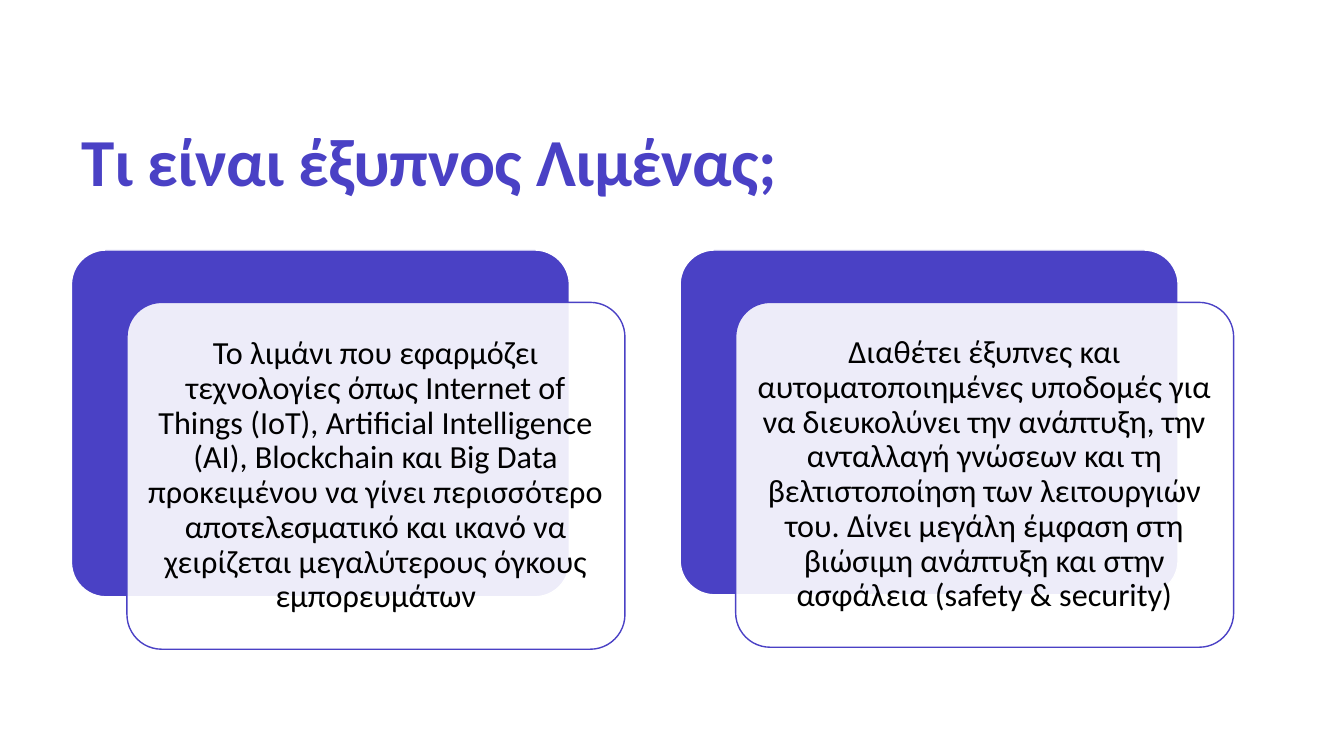
import pptx
import pptx.util
import pptx.dml.color
import pptx.enum.shapes
import pptx.enum.text
from lxml import etree
from pptx.oxml.ns import qn
from pptx.util import Cm, Pt

TITLE = "Τι είναι έξυπνος Λιμένας;"
# Text and height (cm) of each card
CARDS = [
    ("Το λιμάνι που εφαρμόζει τεχνολογίες όπως Internet of Things (IoT), "
     "Artificial Intelligence (AI), Blockchain και Big Data προκειμένου να γίνει "
     "περισσότερο αποτελεσματικό και ικανό να χειρίζεται μεγαλύτερους όγκους "
     "εμπορευμάτων", 8.74),
    ("Διαθέτει έξυπνες και αυτοματοποιημένες υποδομές για να διευκολύνει την "
     "ανάπτυξη, την ανταλλαγή γνώσεων και τη βελτιστοποίηση των λειτουργιών του. "
     "Δίνει μεγάλη έμφαση στη βιώσιμη ανάπτυξη και στην ασφάλεια "
     "(safety & security)", 8.69),
]
COLORS = {"accent": "4A41C5", "white": "FFFFFF", "text": "000000"}
FONT = "Calibri"

LEFT, CARD_TOP = 1.8, 6.3
CARD_WIDTH, CARD_PITCH = 12.55, 15.34
FRONT_DX, FRONT_DY = 1.4, 1.32
MARGIN = 0.25


def color(name):
    return pptx.dml.color.RGBColor.from_string(COLORS[name])


def style_paragraph(para, size, color_name):
    para.line_spacing = 0.9
    para.font.name = FONT
    para.font.size = Pt(size)
    para.font.color.rgb = color(color_name)


def add_panel(page, left, top, height, fill, line):
    box = page.shapes.add_shape(
        pptx.enum.shapes.MSO_SHAPE.ROUNDED_RECTANGLE,
        Cm(left), Cm(top), Cm(CARD_WIDTH), Cm(height))
    box.adjustments[0] = 0.1
    box.shadow.inherit = False
    box.fill.solid()
    box.fill.fore_color.rgb = color(fill)
    box.line.color.rgb = color(line)
    box.line.width = Pt(1)
    return box


def set_opacity(box, percent):
    fill_color = box.fill._xPr.find(qn("a:solidFill"))[0]
    etree.SubElement(fill_color, qn("a:alpha"), val=str(percent * 1000))


def add_title(page):
    title = page.shapes.title
    title.left, title.top = Cm(LEFT), Cm(1.02)
    title.width, title.height = Cm(29.31), Cm(4.17)
    frame = title.text_frame
    frame.text = TITLE
    frame.word_wrap = True
    frame.vertical_anchor = pptx.enum.text.MSO_ANCHOR.BOTTOM
    para = frame.paragraphs[0]
    para.alignment = pptx.enum.text.PP_ALIGN.LEFT
    style_paragraph(para, 48, "accent")
    para.font.bold = True
    para.runs[0].font._element.set("spc", "-40")


def add_card(page, left, text, height):
    """Draw a solid panel with an offset translucent text panel over it."""
    add_panel(page, left, CARD_TOP, height, "accent", "white")
    front = add_panel(page, left + FRONT_DX, CARD_TOP + FRONT_DY, height,
                      "white", "accent")
    set_opacity(front, 90)
    frame = front.text_frame
    frame.text = text
    frame.word_wrap = True
    frame.vertical_anchor = pptx.enum.text.MSO_ANCHOR.MIDDLE
    frame.margin_left = frame.margin_right = Cm(MARGIN)
    frame.margin_top = frame.margin_bottom = Cm(MARGIN)
    para = frame.paragraphs[0]
    para.alignment = pptx.enum.text.PP_ALIGN.CENTER
    style_paragraph(para, 23, "text")


def main():
    deck = pptx.Presentation()
    deck.slide_width, deck.slide_height = Cm(33.87), Cm(19.05)
    page = deck.slides.add_slide(deck.slide_layouts.get_by_name("Title Only"))
    add_title(page)
    for index, (text, height) in enumerate(CARDS):
        add_card(page, LEFT + index * CARD_PITCH, text, height)
    deck.save("out.pptx")


if __name__ == "__main__":
    main()
